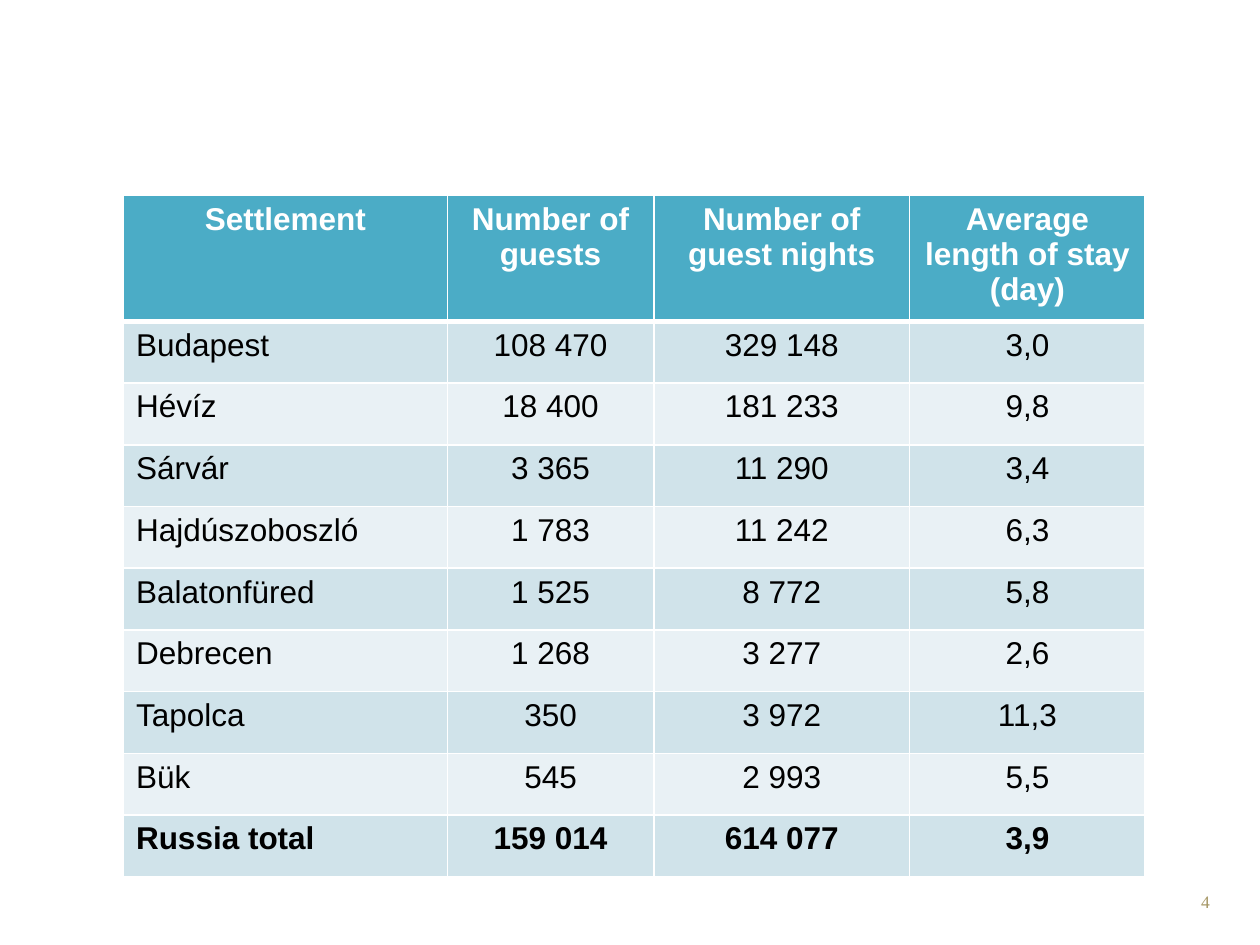
import pptx
import pptx.dml.color
import pptx.enum.text
import pptx.oxml
import pptx.oxml.ns
import pptx.util
from pptx.util import Inches

RGBColor = pptx.dml.color.RGBColor
Align = pptx.enum.text.PP_ALIGN

WHITE = RGBColor(0xFF, 0xFF, 0xFF)
BLACK = RGBColor(0x00, 0x00, 0x00)
TEAL = RGBColor(0x4B, 0xAC, 0xC6)
BANDS = (RGBColor(0xE9, 0xF1, 0xF5), RGBColor(0xD0, 0xE3, 0xEA))
TAN = RGBColor(0xA6, 0x97, 0x65)

COLUMN_WIDTHS = (2.57, 1.64, 2.03, 1.87)
HEADER_HEIGHT, ROW_HEIGHT = 0.85, 0.49

ROWS = (
    ("Settlement", "Number of guests", "Number of guest nights",
     "Average length of stay (day)"),
    ("Budapest", "108 470", "329 148", "3,0"),
    ("Hévíz", "18 400", "181 233", "9,8"),
    ("Sárvár", "3 365", "11 290", "3,4"),
    ("Hajdúszoboszló", "1 783", "11 242", "6,3"),
    ("Balatonfüred", "1 525", "8 772", "5,8"),
    ("Debrecen", "1 268", "3 277", "2,6"),
    ("Tapolca", "350", "3 972", "11,3"),
    ("Bük", "545", "2 993", "5,5"),
    ("Russia total", "159 014", "614 077", "3,9"),
)


def write_text(frame, text, size=18, font="Arial", color=BLACK, bold=False,
               align=Align.CENTER):
    frame.word_wrap = True
    para = frame.paragraphs[0]
    para.alignment = align
    span = para.add_run()
    span.text = text
    span.font.size = pptx.util.Pt(size)
    span.font.name = font
    span.font.color.rgb = color
    span.font.bold = bold


def set_borders(cell, top=1, bottom=1):
    """Draw white borders; widths are in points. Call before filling the cell."""
    properties = cell._tc.get_or_add_tcPr()
    for side, width in (("L", 1), ("R", 1), ("T", top), ("B", bottom)):
        properties.append(pptx.oxml.parse_xml(
            f'<a:ln{side} {pptx.oxml.ns.nsdecls("a")} w="{pptx.util.Pt(width)}">'
            f'<a:solidFill><a:srgbClr val="{WHITE}"/></a:solidFill></a:ln{side}>'))


def add_guest_table(slide):
    height = HEADER_HEIGHT + ROW_HEIGHT * (len(ROWS) - 1)
    table = slide.shapes.add_table(
        len(ROWS), len(COLUMN_WIDTHS), Inches(0.98), Inches(1.55),
        Inches(sum(COLUMN_WIDTHS)), Inches(height)).table
    for column, width in zip(table.columns, COLUMN_WIDTHS):
        column.width = Inches(width)
    for row_index, values in enumerate(ROWS):
        is_header = row_index == 0
        is_total = row_index == len(ROWS) - 1
        table.rows[row_index].height = Inches(HEADER_HEIGHT if is_header else ROW_HEIGHT)
        for column_index, value in enumerate(values):
            cell = table.cell(row_index, column_index)
            set_borders(cell, top=3 if row_index == 1 else 1,
                        bottom=3 if is_header else 1)
            cell.fill.solid()
            cell.fill.fore_color.rgb = TEAL if is_header else BANDS[row_index % 2]
            is_name = column_index == 0 and not is_header
            write_text(cell.text_frame, value,
                       color=WHITE if is_header else BLACK,
                       bold=is_header or is_total,
                       align=Align.LEFT if is_name else Align.CENTER)


def add_page_number(slide, number):
    box = slide.shapes.add_textbox(Inches(7.37), Inches(7.02), Inches(2.33), Inches(0.4))
    write_text(box.text_frame, number, size=10, font="Times New Roman",
               color=TAN, align=Align.RIGHT)


def main():
    deck = pptx.Presentation()
    deck.slide_width, deck.slide_height = Inches(10), Inches(7.5)
    slide = deck.slides.add_slide(deck.slide_layouts[6])
    add_page_number(slide, "4")
    add_guest_table(slide)
    deck.save("out.pptx")


if __name__ == "__main__":
    main()
